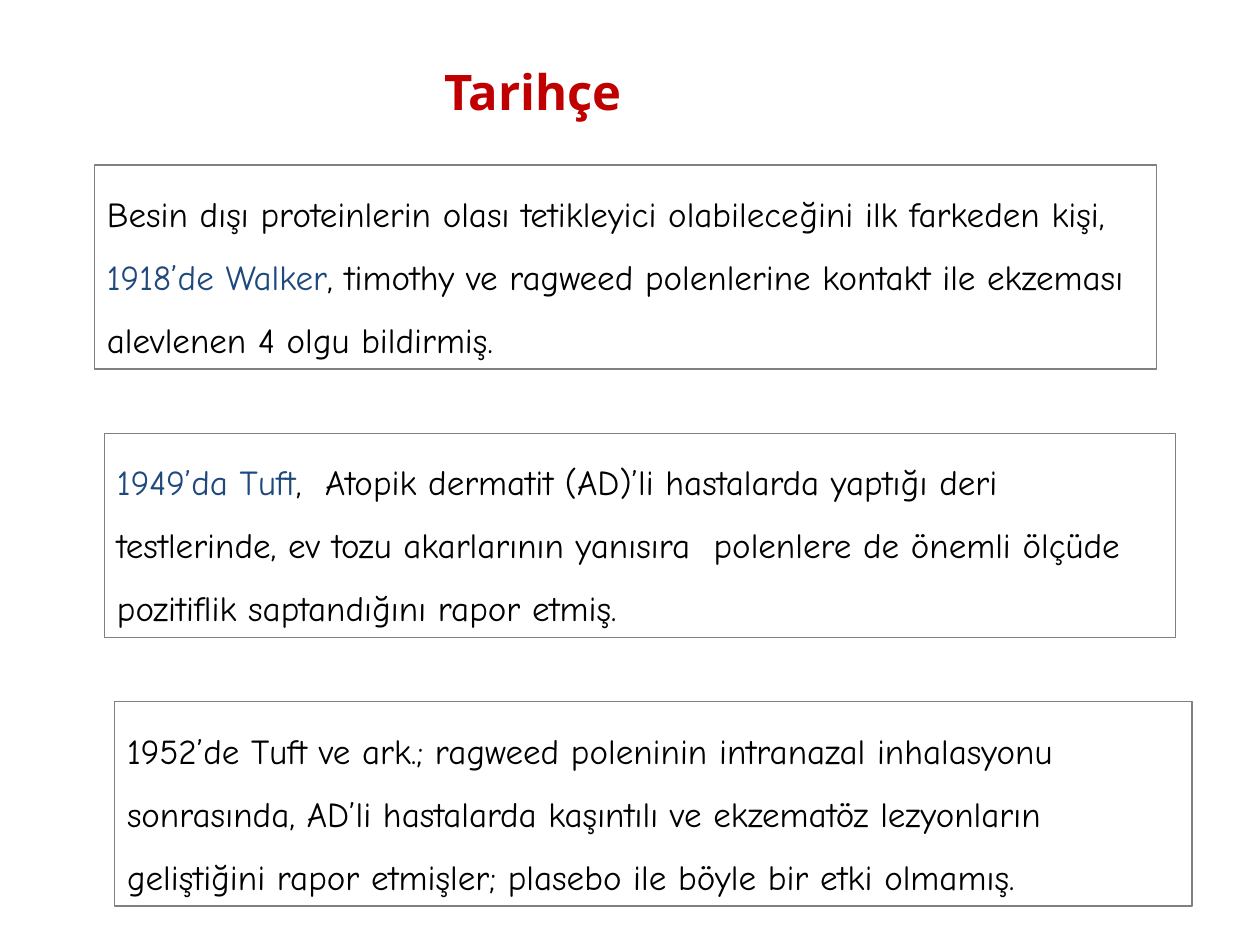
from dataclasses import dataclass
from typing import Optional

from pptx import Presentation
from pptx import util as u
from pptx.dml.color import RGBColor
from pptx.enum import shapes, text

WIDE, HIGH = u.Inches(10), u.Inches(7.5)
BLACK = RGBColor(0x00, 0x00, 0x00)
WHITE = RGBColor(0xFF, 0xFF, 0xFF)
GREY = RGBColor(0x80, 0x80, 0x80)
BLUE = RGBColor(0x1F, 0x49, 0x7D)
RED = RGBColor(0xC0, 0x00, 0x00)

# Each note box sits one step right of and below the one before.
LEFT, TOP = 0.075, 1.31 / 7.5
STEP_X, STEP_Y = 0.008, 2.13 / 7.5
TALL = 1.62 / 7.5


@dataclass
class Run:
    words: str
    color: RGBColor = BLACK


@dataclass
class Note:
    width: float
    runs: list[Run]
    fill: Optional[RGBColor] = None


NOTES = [
    Note(0.843, [
        Run("Besin dışı proteinlerin olası tetikleyici olabileceğini ilk farkeden kişi, "),
        Run("1918’de Walker", BLUE),
        Run(", timothy ve ragweed polenlerine kontakt ile ekzeması "
            "alevlenen 4 olgu bildirmiş."),
    ]),
    Note(0.85, [
        Run("1949’da Tuft", BLUE),
        Run(",  Atopik dermatit (AD)’li hastalarda yaptığı deri testlerinde, "
            "ev tozu akarlarının yanısıra  polenlere de önemli ölçüde "
            "pozitiflik saptandığını rapor etmiş."),
    ], WHITE),
    Note(0.855, [
        Run("1952’de Tuft ve ark.; ragweed poleninin intranazal inhalasyonu "
            "sonrasında, AD’li hastalarda kaşıntılı ve ekzematöz lezyonların "
            "geliştiğini rapor etmişler; plasebo ile böyle bir etki olmamış."),
    ]),
]


def place(x: float, y: float, w: float, h: float) -> tuple[int, int, int, int]:
    """Turn shares of the slide's size into lengths."""
    return int(x * WIDE), int(y * HIGH), int(w * WIDE), int(h * HIGH)


def write(shape, runs: list[Run], face: str, size: float):
    """Fill the shape with one left-aligned paragraph and return it."""
    frame = shape.text_frame
    frame.word_wrap = True
    frame.auto_size = text.MSO_AUTO_SIZE.SHAPE_TO_FIT_TEXT
    frame.vertical_anchor = text.MSO_ANCHOR.TOP
    para = frame.paragraphs[0]
    para.alignment = text.PP_ALIGN.LEFT
    para.font.name, para.font.size = face, u.Pt(size)
    for part in runs:
        run = para.add_run()
        run.text = part.words
        run.font.color.rgb = part.color
    return para


def add_title(slide) -> None:
    box = slide.shapes.add_textbox(*place(0.343, 0.44 / 7.5, 0.213, 0.57 / 7.5))
    para = write(box, [Run("Tarihçe", RED)], "Noto Sans", 28)
    para.font.bold = True


def add_note(slide, note: Note, row: int) -> None:
    spot = place(LEFT + row * STEP_X, TOP + row * STEP_Y, note.width, TALL)
    box = slide.shapes.add_shape(shapes.MSO_SHAPE.RECTANGLE, *spot)
    box.shadow.inherit = False
    if note.fill is None:
        box.fill.background()
    else:
        box.fill.solid()
        box.fill.fore_color.rgb = note.fill
    box.line.color.rgb = GREY
    box.line.width = u.Pt(0.75)
    para = write(box, note.runs, "Comic Neue", 20)
    para.line_spacing = 1.5


def main() -> None:
    deck = Presentation()
    deck.slide_width, deck.slide_height = WIDE, HIGH
    slide = deck.slides.add_slide(deck.slide_layouts[6])
    add_title(slide)
    for row, note in enumerate(NOTES):
        add_note(slide, note, row)
    deck.save("out.pptx")


if __name__ == "__main__":
    main()
